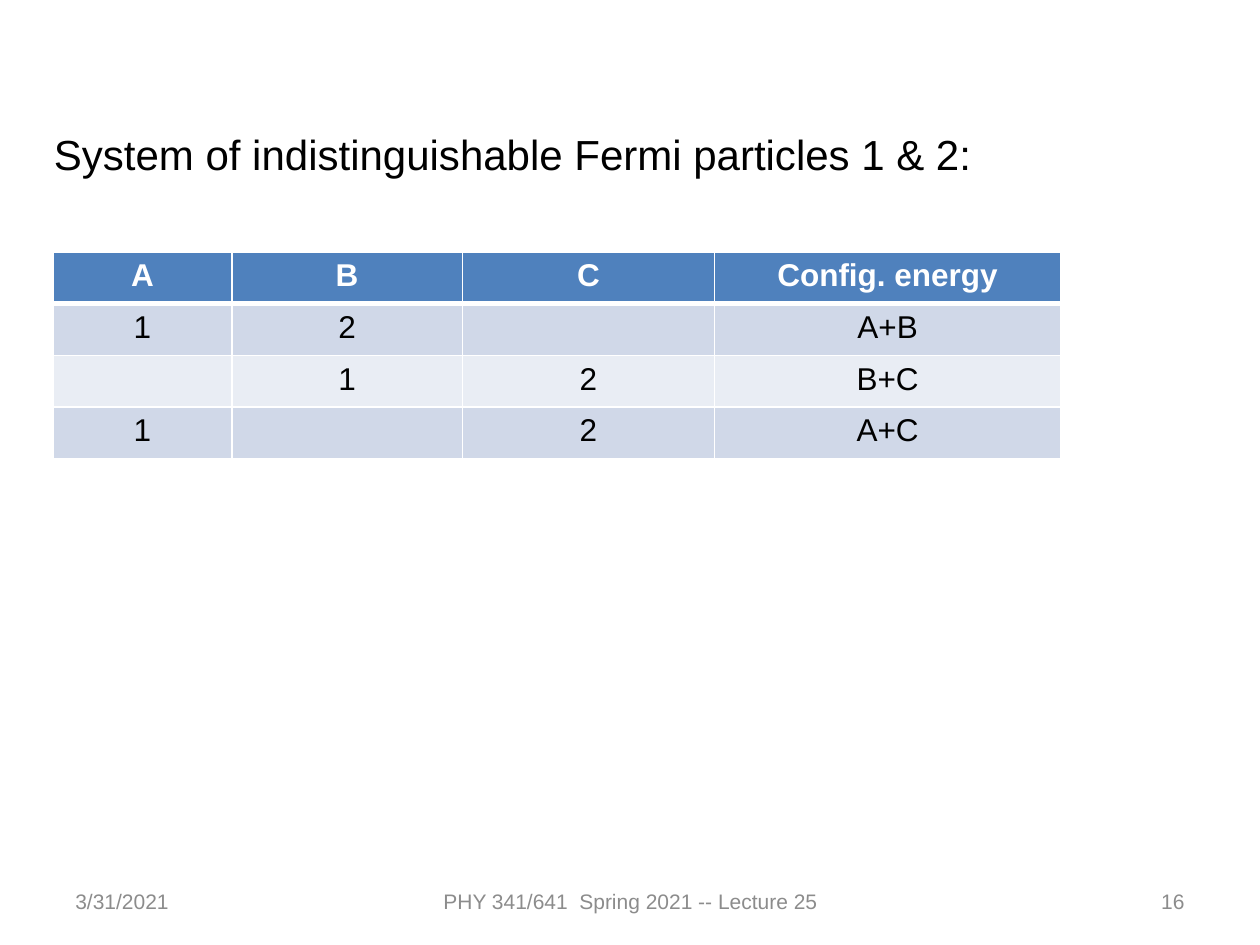
from dataclasses import dataclass

import pptx
import pptx.dml.color
import pptx.enum.text
import pptx.oxml
import pptx.oxml.ns
import pptx.util
from pptx.util import Inches

ALIGN = pptx.enum.text.PP_ALIGN
ANCHOR = pptx.enum.text.MSO_ANCHOR


@dataclass(frozen=True)
class Theme:
    font: str = "Arial"
    title_size: int = 24
    table_size: int = 18
    footer_size: int = 12
    ink: str = "000000"
    footer: str = "8C8C8C"
    white: str = "FFFFFF"
    header: str = "4F81BD"
    bands: tuple = ("D0D8E8", "E9EDF4")
    rule: int = 1
    header_rule: int = 3


THEME = Theme()
COLUMN_WIDTHS = (1.42, 1.83, 2, 2.75)
CONFIGURATIONS = (
    ("A", "B", "C", "Config. energy"),
    ("1", "2", "", "A+B"),
    ("", "1", "2", "B+C"),
    ("1", "", "2", "A+C"),
)
FOOTERS = (
    ("3/31/2021", 0.5, 2.33, ALIGN.LEFT),
    ("PHY 341/641  Spring 2021 -- Lecture 25", 3.42, 3.17, ALIGN.CENTER),
    ("16", 7.17, 2.33, ALIGN.RIGHT),
)


def rgb(color):
    return pptx.dml.color.RGBColor.from_string(color)


def style_paragraph(para, size, color, align, bold=False):
    para.alignment = align
    para.font.name = THEME.font
    para.font.size = pptx.util.Pt(size)
    para.font.bold = bold
    para.font.color.rgb = rgb(color)


def add_text(page, text, left, top, width, height, size, color,
             align=ALIGN.LEFT, anchor=ANCHOR.TOP):
    box = page.shapes.add_textbox(
        Inches(left), Inches(top), Inches(width), Inches(height))
    frame = box.text_frame
    frame.word_wrap = True
    frame.vertical_anchor = anchor
    frame.text = text
    style_paragraph(frame.paragraphs[0], size, color, align)


def add_borders(cell, widths):
    """Draw white cell borders; widths maps each side to points."""
    properties = cell._tc.get_or_add_tcPr()
    for side, points in widths.items():
        properties.append(pptx.oxml.parse_xml(
            f'<a:ln{side} {pptx.oxml.ns.nsdecls("a")} w="{pptx.util.Pt(points)}">'
            f'<a:solidFill><a:srgbClr val="{THEME.white}"/></a:solidFill>'
            f'</a:ln{side}>'))


def style_cell(cell, row):
    is_header = row == 0
    widths = dict.fromkeys("LRTB", THEME.rule)
    if is_header:
        widths["B"] = THEME.header_rule
    elif row == 1:
        widths["T"] = THEME.header_rule
    add_borders(cell, widths)
    cell.fill.solid()
    cell.fill.fore_color.rgb = rgb(
        THEME.header if is_header else THEME.bands[(row - 1) % 2])
    style_paragraph(cell.text_frame.paragraphs[0], THEME.table_size,
                    THEME.white if is_header else THEME.ink,
                    ALIGN.CENTER, bold=is_header)


def add_configuration_table(page, left, top, row_height):
    row_count = len(CONFIGURATIONS)
    table = page.shapes.add_table(
        row_count, len(COLUMN_WIDTHS), Inches(left), Inches(top),
        Inches(sum(COLUMN_WIDTHS)), Inches(row_height * row_count)).table
    table.first_row = table.horz_banding = False
    for column, width in zip(table.columns, COLUMN_WIDTHS):
        column.width = Inches(width)
    for row, values in enumerate(CONFIGURATIONS):
        table.rows[row].height = Inches(row_height)
        for column, value in enumerate(values):
            cell = table.cell(row, column)
            cell.text = value
            style_cell(cell, row)


def main():
    deck = pptx.Presentation()
    deck.slide_width, deck.slide_height = Inches(10), Inches(7.5)
    page = deck.slides.add_slide(deck.slide_layouts[6])
    for text, left, width, align in FOOTERS:
        add_text(page, text, left, 6.95, width, 0.4, THEME.footer_size,
                 THEME.footer, align, ANCHOR.MIDDLE)
    add_configuration_table(page, 0.42, 2, 0.41)
    add_text(page, "System of indistinguishable Fermi particles 1 & 2:",
             0.33, 0.97, 9.33, 0.5, THEME.title_size, THEME.ink)
    deck.save("out.pptx")


if __name__ == "__main__":
    main()
